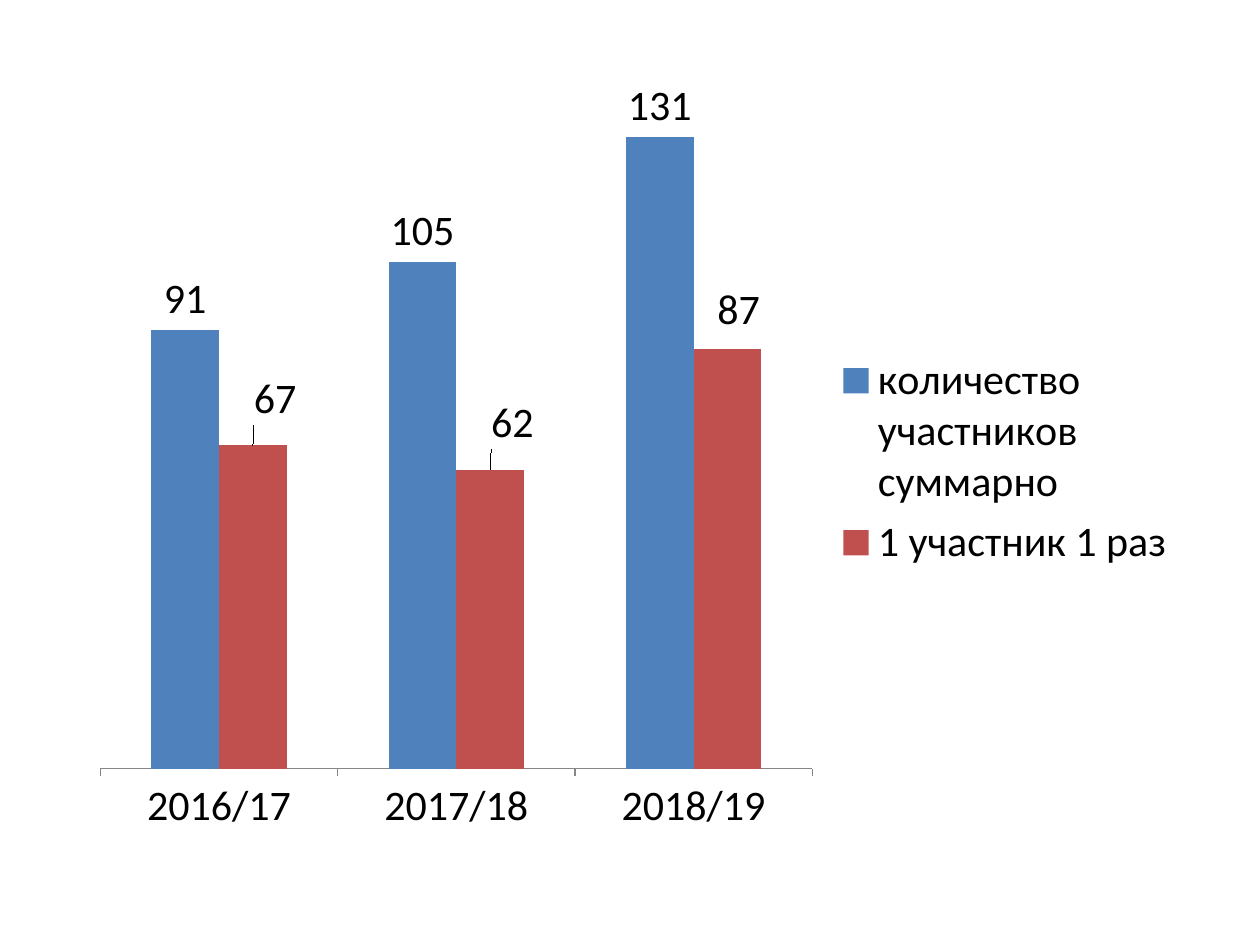
from lxml import etree
from pptx import Presentation
from pptx.chart.data import CategoryChartData
from pptx.dml.color import RGBColor
from pptx.enum.chart import XL_CHART_TYPE, XL_LABEL_POSITION, XL_LEGEND_POSITION, XL_TICK_MARK
from pptx.oxml.ns import qn
from pptx.util import Pt

CLUSTERED = XL_CHART_TYPE.COLUMN_CLUSTERED
OUTSIDE_END = XL_LABEL_POSITION.OUTSIDE_END
LEGEND_RIGHT = XL_LEGEND_POSITION.RIGHT
TICK_OUTSIDE = XL_TICK_MARK.OUTSIDE
TICK_NONE = XL_TICK_MARK.NONE

YEARS = ["2016/17", "2017/18", "2018/19"]
SERIES = [
    ("количество участников суммарно", [91, 105, 131], "4F81BD"),
    ("1 участник 1 раз", [67, 62, 87], "C0504D"),
]
LABEL_OFFSETS = [(0.02, -0.02), (0.02, -0.02), (0.01, -0.01)]


def color(value):
    """Turn a hex string into a colour."""
    return RGBColor.from_string(value)


def style_font(font, size):
    """Apply the chart's typeface in black at the given size."""
    font.name = "Calibri"
    font.size = Pt(size)
    font.color.rgb = color("000000")


def set_layout(parent, index, **settings):
    """Give a chart part a manual layout as its child at index."""
    for old in parent.findall(qn("c:layout")):
        parent.remove(old)
    layout = etree.Element(qn("c:layout"))
    parent.insert(index, layout)
    manual = etree.SubElement(layout, qn("c:manualLayout"))
    for name, value in settings.items():
        etree.SubElement(manual, qn(f"c:{name}")).set("val", str(value))


def style_axes(chart):
    """Show a plain category axis and hide the value axis."""
    category_axis = chart.category_axis
    category_axis.major_tick_mark = TICK_OUTSIDE
    category_axis.minor_tick_mark = TICK_NONE
    category_axis.format.line.color.rgb = color("868686")
    style_font(category_axis.tick_labels.font, 24)
    value_axis = chart.value_axis
    value_axis.minimum_scale = 0
    value_axis.maximum_scale = 140
    value_axis.has_major_gridlines = False
    value_axis.visible = False


def style_series(series, fill):
    """Fill the columns and show their values above them."""
    series.format.fill.solid()
    series.format.fill.fore_color.rgb = color(fill)
    series.invert_if_negative = False
    labels = series.data_labels
    labels.show_value = True
    labels.position = OUTSIDE_END
    style_font(labels.font, 24)


def shift_labels(chart, series, offsets):
    """Move each value label of a series by a share of the chart size."""
    for index, (x, y) in enumerate(offsets):
        label = series.points[index].data_label
        label.position = OUTSIDE_END
        style_font(label.font, 24)
    for element, (x, y) in zip(chart.element.iter(qn("c:dLbl")), offsets):
        set_layout(element, 1, x=x, y=y)


def add_participants_chart(slide, left, top, width, height):
    """Place the column chart of participants per school year."""
    data = CategoryChartData()
    data.categories = YEARS
    for name, values, fill in SERIES:
        data.add_series(name, values)
    chart = slide.shapes.add_chart(
        CLUSTERED, Pt(left), Pt(top), Pt(width), Pt(height), data
    ).chart
    style_font(chart.font, 10)
    chart.has_title = False
    chart.has_legend = True
    chart.legend.position = LEGEND_RIGHT
    chart.legend.include_in_layout = False
    style_font(chart.legend.font, 24)
    style_axes(chart)
    plot = chart.plots[0]
    plot.gap_width = 150
    plot.overlap = 0
    plot.vary_by_categories = False
    for series, (name, values, fill) in zip(plot.series, SERIES):
        style_series(series, fill)
    shift_labels(chart, plot.series[1], LABEL_OFFSETS)
    plot_area = next(chart.element.iter(qn("c:plotArea")))
    set_layout(plot_area, 0, layoutTarget="inner", xMode="edge", yMode="edge",
               x=0.02, y=0.02, w=0.64, h=0.88)


def main():
    """Build the slide and save it."""
    presentation = Presentation()
    presentation.slide_width = Pt(720)
    presentation.slide_height = Pt(540)
    slide = presentation.slides.add_slide(presentation.slide_layouts[6])
    add_participants_chart(slide, 44.64, 44.64, 635.76, 438.48)
    presentation.save("out.pptx")


if __name__ == "__main__":
    main()
